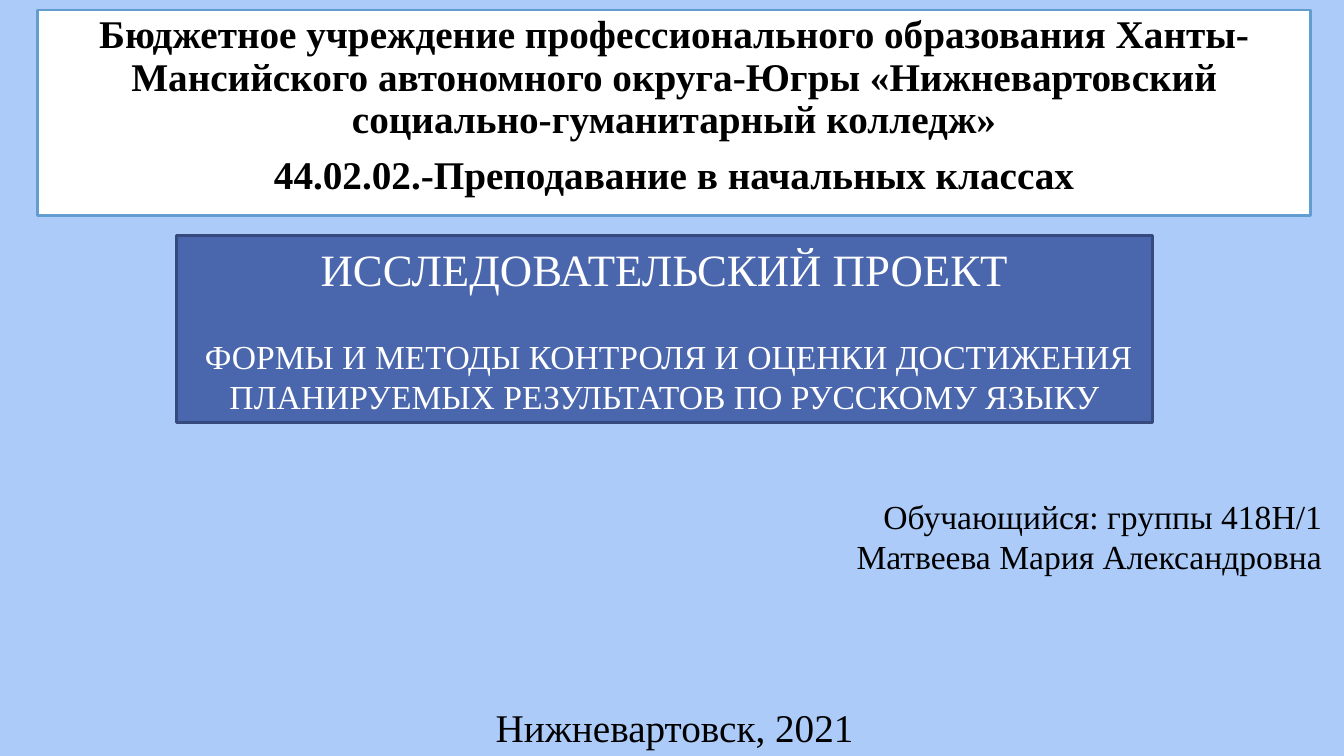
from pptx import Presentation
from pptx.dml.color import RGBColor
from pptx.enum.shapes import MSO_SHAPE
from pptx.enum.text import MSO_ANCHOR, MSO_AUTO_SIZE, PP_ALIGN
from pptx.util import Inches, Pt

THEME = {
    "font": "Times New Roman",
    "background": "ACCBF9",
    "black": "000000",
    "white": "FFFFFF",
    "header_line": "629DD1",
    "title_fill": "4A66AC",
    "title_line": "364A7D",
    "large": 32,
    "medium": 28,
    "small": 24,
    "line_width": 2,
}

# Each paragraph: text, type size, paragraph format
BLOCKS = [
    {
        "at": (0.37, 0.1, 12.63, 2.04),
        "fill": "white", "line": "header_line", "color": "black", "bold": True,
        "anchor": MSO_ANCHOR.TOP, "fit": MSO_AUTO_SIZE.NONE, "align": PP_ALIGN.CENTER,
        "paragraphs": [
            ("Бюджетное учреждение профессионального образования Ханты-Мансийского "
             "автономного округа-Югры «Нижневартовский социально-гуманитарный колледж»",
             "medium", {"line_spacing": 0.9}),
            ("44.02.02.-Преподавание в начальных классах",
             "medium", {"line_spacing": 0.9, "space_before": Pt(10)}),
        ],
    },
    {
        "at": (1.75, 2.34, 9.68, 1.85),
        "fill": "title_fill", "line": "title_line", "color": "white", "bold": False,
        "anchor": MSO_ANCHOR.MIDDLE, "fit": MSO_AUTO_SIZE.SHAPE_TO_FIT_TEXT,
        "align": PP_ALIGN.CENTER,
        "paragraphs": [
            ("ИССЛЕДОВАТЕЛЬСКИЙ ПРОЕКТ", "large", {}),
            (" ФОРМЫ И МЕТОДЫ КОНТРОЛЯ И ОЦЕНКИ ДОСТИЖЕНИЯ ПЛАНИРУЕМЫХ РЕЗУЛЬТАТОВ "
             "ПО РУССКОМУ ЯЗЫКУ", "small", {"space_before": Pt(29)}),
        ],
    },
    {
        "at": (8.21, 4.87, 5, 0.91),
        "color": "black", "bold": False,
        "anchor": MSO_ANCHOR.TOP, "fit": MSO_AUTO_SIZE.SHAPE_TO_FIT_TEXT,
        "align": PP_ALIGN.RIGHT,
        "paragraphs": [
            ("Обучающийся: группы 418Н/1", "small", {}),
            ("Матвеева Мария Александровна", "small", {}),
        ],
    },
    {
        "at": (2.1, 6.93, 9.18, 0.57),
        "color": "black", "bold": False,
        "anchor": MSO_ANCHOR.TOP, "fit": MSO_AUTO_SIZE.SHAPE_TO_FIT_TEXT,
        "align": PP_ALIGN.CENTER,
        "paragraphs": [("Нижневартовск, 2021", "medium", {})],
    },
]


def theme_color(name):
    return RGBColor.from_string(THEME[name])


def set_attributes(target, values):
    for name, value in values.items():
        setattr(target, name, value)


def add_box(page, block):
    """Add a filled rectangle if the block has a fill, otherwise a text box."""
    place = [Inches(length) for length in block["at"]]
    if "fill" not in block:
        return page.shapes.add_textbox(*place)
    box = page.shapes.add_shape(MSO_SHAPE.RECTANGLE, *place)
    box.shadow.inherit = False
    box.fill.solid()
    box.fill.fore_color.rgb = theme_color(block["fill"])
    box.line.color.rgb = theme_color(block["line"])
    box.line.width = Pt(THEME["line_width"])
    return box


def write_text(box, block):
    frame = box.text_frame
    set_attributes(frame, {"word_wrap": True, "auto_size": block["fit"],
                           "vertical_anchor": block["anchor"]})
    for index, (text, size, spacing) in enumerate(block["paragraphs"]):
        para = frame.add_paragraph() if index else frame.paragraphs[0]
        set_attributes(para, {"alignment": block["align"], **spacing})
        span = para.add_run()
        span.text = text
        set_attributes(span.font, {"name": THEME["font"], "size": Pt(THEME[size]),
                                   "bold": block["bold"]})
        span.font.color.rgb = theme_color(block["color"])


def main():
    deck = Presentation()
    set_attributes(deck, {"slide_width": Inches(13.33), "slide_height": Inches(7.5)})
    page = deck.slides.add_slide(deck.slide_layouts[6])
    page.background.fill.solid()
    page.background.fill.fore_color.rgb = theme_color("background")
    for block in BLOCKS:
        write_text(add_box(page, block), block)
    deck.save("out.pptx")


if __name__ == "__main__":
    main()
